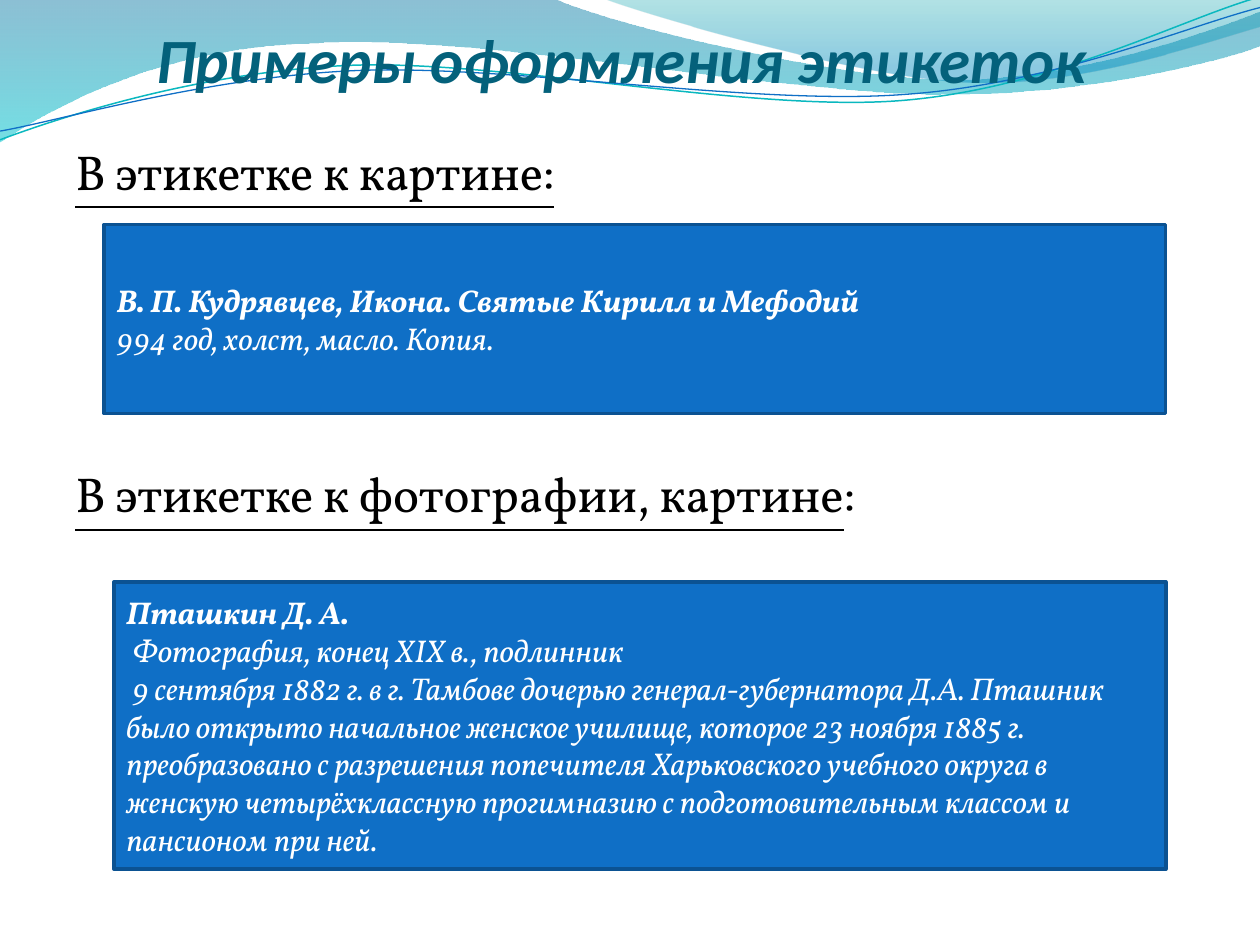
"""Build the slide with two sample museum labels under a wavy header."""
from typing import NamedTuple, Optional

from lxml.etree import SubElement
from pptx import Presentation
from pptx.dml.color import RGBColor
from pptx.enum.shapes import MSO_SHAPE as Preset
from pptx.enum.text import MSO_ANCHOR as Anchor, PP_ALIGN as Align
from pptx.oxml.ns import qn
from pptx.util import Pt

BLUE, DARK_BLUE, TEAL = "0F6FC6", "0B5292", "04617B"


class Stop(NamedTuple):
    position: float
    color: str
    opacity: int


class Wave(NamedTuple):
    start: tuple
    segments: tuple
    stops: tuple = ()
    line: Optional[str] = None
    width: float = 0


class Span(NamedTuple):
    text: str
    size: float = 18
    color: str = "FFFFFF"
    font: str = "Vollkorn"
    bold: bool = False
    italic: bool = False
    underline: bool = False


class Label(NamedTuple):
    box: tuple
    lines: tuple


class Heading(NamedTuple):
    space_before: float
    spans: tuple


def label_line(text: str, bold: bool = False) -> Span:
    """Return one italic line of a label."""
    return Span(text, bold=bold, italic=True)


def heading_span(text: str, underline: bool = True) -> Span:
    """Return one piece of a heading."""
    return Span(text, 28, "000000", underline=underline)


WAVES = (
    Wave((0, 0), (
        (316.8, -0.7),
        (342.7, 12.2, 478.1, 45.4, 545.8, 45.4),
        (614.2, 45.4, 689.8, 18.7, 720, 6.5),
        (720.7, 25.9),
        (707.8, 31.7, 626.4, 54.7, 537.1, 54),
        (447.8, 54, 275, 20.2, 185, 24.5),
        (92.9, 25.9, 33.1, 59.8, -0.7, 81.4),
    ), (Stop(0, "0074A1", 45), Stop(1, "00C6CF", 55))),
    Wave((344.9, -0.7), (
        (366.5, 7.9, 491, 44.6, 553.7, 46.8),
        (616.3, 49.7, 691.9, 23, 720, 15.1),
        (720, 0),
    ), (Stop(0, "00A1A9", 30), Stop(0.8, "008BBF", 45))),
    Wave((0, 79.9), (
        (34.6, 67, 113.8, 41, 199.4, 37.4),
        (284.4, 33.8, 427, 64.1, 513.4, 57.6),
        (599.8, 51.1, 675.4, 10.8, 718.6, -1.4),
    ), line="0AB8BF", width=0.85),
    Wave((0, 74.9), (
        (33.8, 69.1, 118.1, 43.9, 203.8, 40.3),
        (290.2, 36.7, 429.8, 60.5, 516.2, 54),
        (601.9, 48.2, 677.5, 15.1, 720, 4.3),
    ), line=BLUE, width=0.75),
)

HEADINGS = (
    Heading(5.6, (heading_span("В этикетке к картине:"),)),
    Heading(150.7, (heading_span("В этикетке к фотографии, картине"),
                    heading_span(":", underline=False))),
)

LABELS = (
    Label((65.2, 332.5, 601, 164.2), (
        label_line("Пташкин Д. А.", bold=True),
        label_line(" Фотография, конец XIX в., подлинник"),
        label_line(" 9 сентября 1882 г. в г. Тамбове дочерью генерал-губернатора "
                   "Д.А. Пташник было открыто начальное женское училище, которое "
                   "23 ноября 1885 г. преобразовано с разрешения попечителя "
                   "Харьковского учебного округа в женскую четырёхклассную "
                   "прогимназию с подготовительным классом и пансионом при ней."),
    )),
    Label((59.5, 128.3, 606.6, 108), (
        label_line("В. П. Кудрявцев, Икона. Святые Кирилл и Мефодий", bold=True),
        label_line("994 год, холст, масло. Копия."),
    )),
)


def rgb(color: str) -> RGBColor:
    """Turn a hex string into a colour."""
    return RGBColor.from_string(color)


def bend(ribbon, segments: tuple) -> None:
    """Turn the straight pieces of an outline into its Bézier curves."""
    outline = next(ribbon._element.iter(qn("a:path")))
    for piece, segment in zip(outline.findall(qn("a:lnTo")), segments):
        if len(segment) == 2:
            continue
        curve = SubElement(outline, qn("a:cubicBezTo"))
        for x, y in zip(segment[::2], segment[1::2]):
            knot = SubElement(curve, qn("a:pt"))
            knot.set("x", str(Pt(x) - ribbon.left))
            knot.set("y", str(Pt(y) - ribbon.top))
        outline.replace(piece, curve)


def draw_wave(shapes, wave: Wave) -> None:
    """Draw a wave as a gradient band or as a thin line."""
    builder = shapes.build_freeform(*map(Pt, wave.start))
    ends = [tuple(map(Pt, segment[-2:])) for segment in wave.segments]
    builder.add_line_segments(ends, close=bool(wave.stops))
    ribbon = builder.convert_to_shape()
    bend(ribbon, wave.segments)
    ribbon.shadow.inherit = False
    if wave.line:
        ribbon.fill.background()
        ribbon.line.color.rgb = rgb(wave.line)
        ribbon.line.width = Pt(wave.width)
        return
    ribbon.line.fill.background()
    ribbon.fill.gradient()
    ribbon.fill.gradient_angle = 270
    for target, stop in zip(ribbon.fill.gradient_stops, wave.stops):
        target.position = stop.position
        target.color.rgb = rgb(stop.color)
    for tint, stop in zip(ribbon._element.spPr.iter(qn("a:srgbClr")), wave.stops):
        SubElement(tint, qn("a:alpha")).set("val", str(stop.opacity * 1000))


def add_span(paragraph, span: Span) -> None:
    """Append one formatted run."""
    run = paragraph.add_run()
    run.text = span.text
    font = run.font
    font.name, font.size, font.color.rgb = span.font, Pt(span.size), rgb(span.color)
    font.bold, font.italic, font.underline = span.bold, span.italic, span.underline


def paragraph_at(frame, index: int):
    """Return the first paragraph of a frame, or append the next one."""
    return frame.add_paragraph() if index else frame.paragraphs[0]


def draw_title(shapes, box: tuple, span: Span) -> None:
    """Draw the centred slide title."""
    frame = shapes.add_textbox(*map(Pt, box)).text_frame
    frame.word_wrap = True
    frame.vertical_anchor = Anchor.BOTTOM
    frame.margin_left = frame.margin_right = frame.margin_bottom = Pt(0)
    frame.paragraphs[0].alignment = Align.CENTER
    add_span(frame.paragraphs[0], span)


def draw_headings(shapes, box: tuple, headings: tuple) -> None:
    """Draw the body text that holds the headings of the labels."""
    frame = shapes.add_textbox(*map(Pt, box)).text_frame
    frame.word_wrap = True
    for index, heading in enumerate(headings):
        paragraph = paragraph_at(frame, index)
        paragraph.space_before = Pt(heading.space_before)
        for span in heading.spans:
            add_span(paragraph, span)


def draw_label(shapes, label: Label) -> None:
    """Draw a blue label with one paragraph per line."""
    plate = shapes.add_shape(Preset.RECTANGLE, *map(Pt, label.box))
    plate.shadow.inherit = False
    plate.fill.solid()
    plate.fill.fore_color.rgb = rgb(BLUE)
    plate.line.color.rgb = rgb(DARK_BLUE)
    plate.line.width = Pt(2)
    frame = plate.text_frame
    frame.word_wrap = True
    frame.vertical_anchor = Anchor.MIDDLE
    for index, line in enumerate(label.lines):
        paragraph = paragraph_at(frame, index)
        paragraph.alignment = Align.LEFT
        add_span(paragraph, line)


def main() -> None:
    """Assemble and save the slide."""
    deck = Presentation()
    deck.slide_width, deck.slide_height = Pt(720), Pt(540)
    shapes = deck.slides.add_slide(deck.slide_layouts[6]).shapes
    for wave in WAVES:
        draw_wave(shapes, wave)
    draw_title(shapes, (31, 20.8, 648, 34),
               Span("Примеры оформления этикеток", 36, TEAL, "Calibri", True, True))
    draw_headings(shapes, (36, 77.3, 648, 420.5), HEADINGS)
    for label in LABELS:
        draw_label(shapes, label)
    deck.save("out.pptx")


if __name__ == "__main__":
    main()
